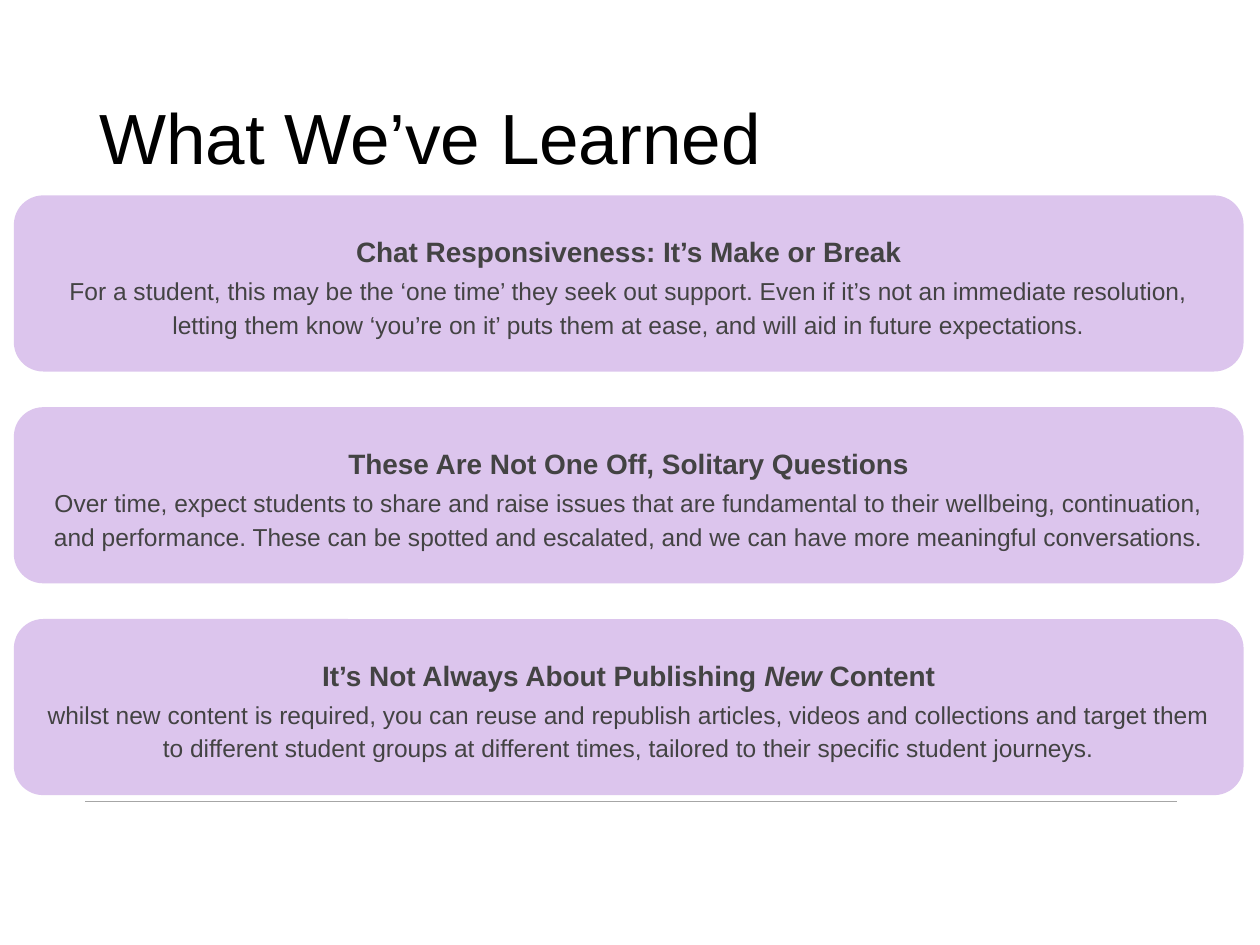
from lxml import etree
from pptx import Presentation
from pptx.dml.color import RGBColor
from pptx.enum.shapes import MSO_CONNECTOR, MSO_SHAPE
from pptx.enum.text import MSO_ANCHOR, PP_ALIGN
from pptx.oxml.ns import qn
from pptx.util import Cm, Pt

ROUNDED = MSO_SHAPE.ROUNDED_RECTANGLE
STRAIGHT = MSO_CONNECTOR.STRAIGHT
MIDDLE = MSO_ANCHOR.MIDDLE
LEFT, CENTER = PP_ALIGN.LEFT, PP_ALIGN.CENTER

TITLE = "What We’ve Learned"
# Each lesson: heading runs as (text, italic), then the body
LESSONS = [
    ([("Chat Responsiveness: It’s Make or Break", False)],
     "For a student, this may be the ‘one time’ they seek out support. Even if it’s not an "
     "immediate resolution, letting them know ‘you’re on it’ puts them at ease, and will aid "
     "in future expectations."),
    ([("These Are Not One Off, Solitary Questions", False)],
     "Over time, expect students to share and raise issues that are fundamental to their "
     "wellbeing, continuation, and performance. These can be spotted and escalated, and we "
     "can have more meaningful conversations."),
    ([("It’s Not Always About Publishing ", False), ("New", True), (" Content", False)],
     "whilst new content is required, you can reuse and republish articles, videos and "
     "collections and target them to different student groups at different times, tailored "
     "to their specific student journeys."),
]

THEME = {
    "font": "Arial",
    "title_color": RGBColor(0x00, 0x00, 0x00),
    "text_color": RGBColor(0x43, 0x43, 0x43),
    "card_color": RGBColor(0xDC, 0xC5, 0xED),
    "rule_color": RGBColor(0xA6, 0xA6, 0xA6),
    "title_size": Pt(40.6),
    "heading_size": Pt(16),
    "body_size": Pt(14),
}

CARD_LEFT, CARD_TOP = Cm(0.28), Cm(3.94)
CARD_WIDTH, CARD_HEIGHT = Cm(24.79), Cm(3.55)
CARD_GAP = Cm(0.72)
CARD_INSET = Cm(0.25)


def style(paragraph, size, color, bold, alignment, line_spacing):
    paragraph.alignment = alignment
    paragraph.line_spacing = line_spacing
    font = paragraph.font
    font.name = THEME["font"]
    font.size = size
    font.bold = bold
    font.color.rgb = color


def add_rule(slide):
    rule = slide.shapes.add_connector(STRAIGHT, Cm(1.72), Cm(16.15), Cm(23.72), Cm(16.15))
    rule.line.color.rgb = THEME["rule_color"]
    rule.line.width = Pt(0.5)
    etree.SubElement(rule.element.spPr, qn("a:effectLst"))


def add_title(slide):
    frame = slide.shapes.add_textbox(Cm(1.75), Cm(1.02), Cm(21.9), Cm(3.68)).text_frame
    frame.word_wrap = True
    frame.vertical_anchor = MIDDLE
    paragraph = frame.paragraphs[0]
    paragraph.text = TITLE
    style(paragraph, THEME["title_size"], THEME["title_color"], False, LEFT, 0.9)


def add_card(slide, top, heading_runs, body):
    card = slide.shapes.add_shape(ROUNDED, CARD_LEFT, top, CARD_WIDTH, CARD_HEIGHT)
    card.shadow.inherit = False
    card.fill.solid()
    card.fill.fore_color.rgb = THEME["card_color"]
    card.line.fill.background()

    frame = card.text_frame
    frame.word_wrap = True
    frame.vertical_anchor = MIDDLE
    frame.margin_left = frame.margin_right = CARD_INSET
    frame.margin_top = frame.margin_bottom = CARD_INSET

    heading = frame.paragraphs[0]
    for text, italic in heading_runs:
        run = heading.add_run()
        run.text = text
        if italic:
            run.font.italic = True
    style(heading, THEME["heading_size"], THEME["text_color"], True, CENTER, 1.2)

    paragraph = frame.add_paragraph()
    paragraph.text = body
    paragraph.space_before = Pt(2)
    style(paragraph, THEME["body_size"], THEME["text_color"], False, CENTER, 1.15)


def main():
    presentation = Presentation()
    presentation.slide_width, presentation.slide_height = Cm(25.4), Cm(19.05)
    slide = presentation.slides.add_slide(presentation.slide_layouts[6])
    add_rule(slide)
    add_title(slide)
    for index, (heading_runs, body) in enumerate(LESSONS):
        add_card(slide, CARD_TOP + index * (CARD_HEIGHT + CARD_GAP), heading_runs, body)
    presentation.save("out.pptx")


if __name__ == "__main__":
    main()
